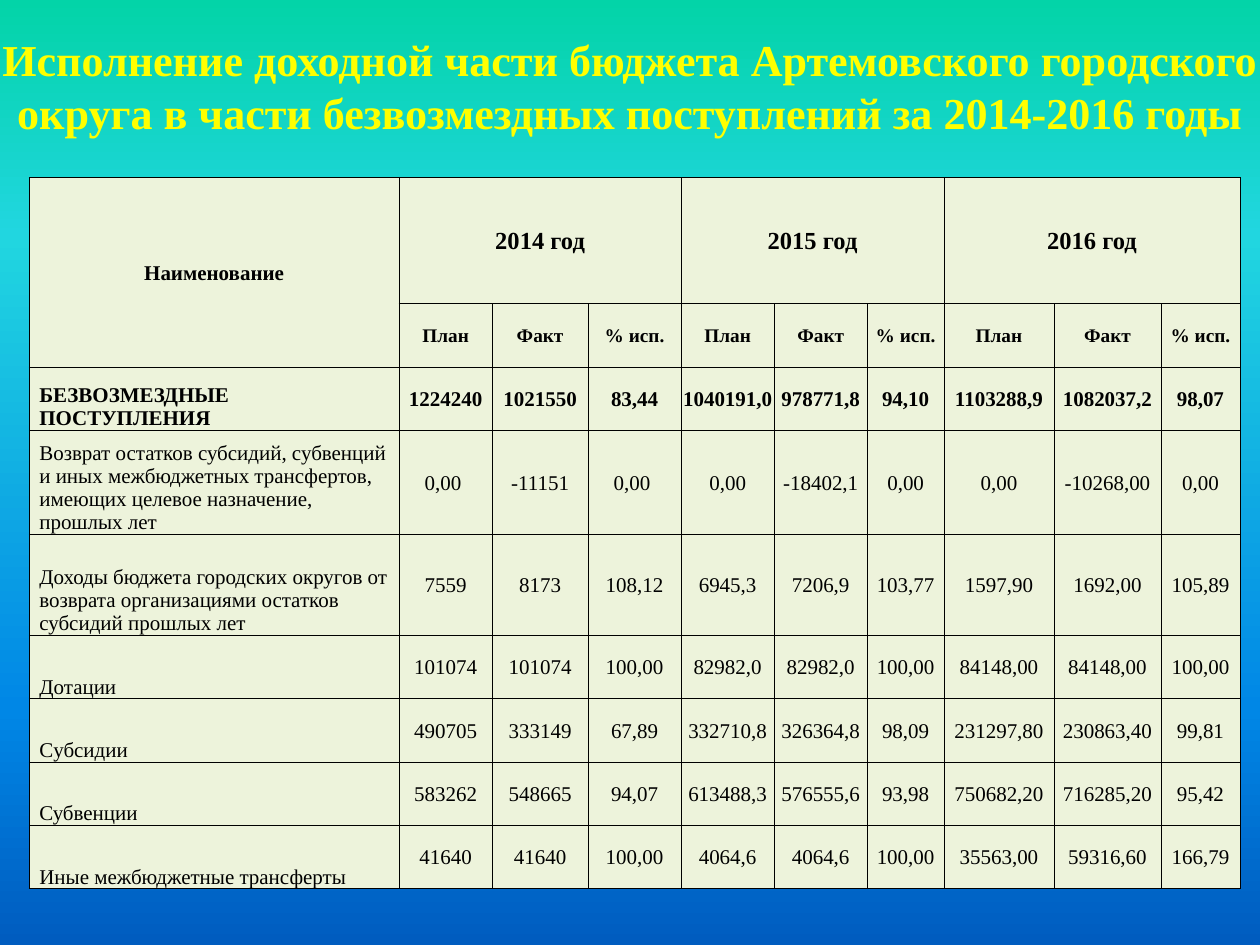
from copy import deepcopy

from lxml import etree
from pptx import Presentation
from pptx.dml.color import RGBColor
from pptx.enum.text import MSO_ANCHOR, PP_ALIGN
from pptx.oxml.ns import qn
from pptx.util import Pt

MIDDLE, BOTTOM = MSO_ANCHOR.MIDDLE, MSO_ANCHOR.BOTTOM
CENTER, LEFT = PP_ALIGN.CENTER, PP_ALIGN.LEFT

THEME = {
    "font": "Times New Roman",
    "title": "FFFF00",
    "text": "000000",
    "cell": "EDF3DB",
    "border": "000000",
    "gradient": [(0, "03D4A8"), (0.25, "21D6E0"), (0.75, "0087E6"), (1, "005CBF")],
    "title_size": 25.2,
    "year_size": 14,
    "body_size": 12,
    "small_size": 11,
}

TITLE = ("Исполнение доходной части бюджета Артемовского городского округа "
         "в части безвозмездных поступлений за 2014-2016 годы")
YEARS = ["2014 год", "2015 год", "2016 год"]
MEASURES = ["План", "Факт", "% исп."]
INCOME = [
    ["БЕЗВОЗМЕЗДНЫЕ ПОСТУПЛЕНИЯ", "1224240", "1021550", "83,44",
     "1040191,0", "978771,8", "94,10", "1103288,9", "1082037,2", "98,07"],
    ["Возврат остатков субсидий, субвенций и иных межбюджетных трансфертов, "
     "имеющих целевое назначение, прошлых лет", "0,00 ", "-11151", "0,00 ",
     "0,00", "-18402,1", "0,00", "0,00", "-10268,00", "0,00"],
    ["Доходы бюджета городских округов от возврата организациями остатков "
     "субсидий прошлых лет", "7559", "8173", "108,12",
     "6945,3", "7206,9", "103,77", "1597,90", "1692,00", "105,89"],
    ["Дотации", "101074", "101074", "100,00",
     "82982,0", "82982,0", "100,00", "84148,00", "84148,00", "100,00"],
    ["Cубсидии", "490705", "333149", "67,89",
     "332710,8", "326364,8", "98,09", "231297,80", "230863,40", "99,81"],
    ["Субвенции", "583262", "548665", "94,07",
     "613488,3", "576555,6", "93,98", "750682,20", "716285,20", "95,42"],
    ["Иные межбюджетные трансферты", "41640", "41640", "100,00",
     "4064,6", "4064,6", "100,00", "35563,00", "59316,60", "166,79"],
]
COLUMN_WIDTHS = [211.4, 53.2, 54.8, 53.2, 53.2, 53.2, 43.9, 62.8, 61.2, 45.1]
ROW_HEIGHTS = [72, 36.3, 36.2, 59.5, 57.6] + [36.2] * 4


def format_text(frame, size, color, bold, align):
    para = frame.paragraphs[0]
    para.alignment = align
    for span in para.runs:
        span.font.name = THEME["font"]
        span.font.size = Pt(size)
        span.font.bold = bold
        span.font.color.rgb = RGBColor.from_string(color)


def add_borders(cell):
    properties = cell._tc.get_or_add_tcPr()
    for position, side in enumerate(("a:lnL", "a:lnR", "a:lnT", "a:lnB")):
        line = etree.Element(qn(side), w=str(Pt(0.5)))
        fill = etree.SubElement(line, qn("a:solidFill"))
        etree.SubElement(fill, qn("a:srgbClr"), val=THEME["border"])
        properties.insert(position, line)


deck = Presentation()
deck.slide_width, deck.slide_height = Pt(720), Pt(540)
page = deck.slides.add_slide(deck.slide_layouts[5])

# Background gradient, top to bottom
background = page.background.fill
background.gradient()
background.gradient_angle = 270
stop_list = page.element.find(".//" + qn("a:gsLst"))
while len(stop_list) < len(THEME["gradient"]):
    stop_list.append(deepcopy(stop_list[0]))
for stop, (position, color) in zip(background.gradient_stops, THEME["gradient"]):
    stop.position = position
    stop.color.rgb = RGBColor.from_string(color)

# Title, filled with the slide background
title = page.shapes.title
title.element.set("useBgFill", "1")
title.left, title.top, title.width, title.height = Pt(0), Pt(11.5), Pt(720), Pt(67.3)
frame = title.text_frame
frame.text = TITLE
frame.word_wrap = True
frame.vertical_anchor = BOTTOM
frame.margin_left, frame.margin_top = Pt(0), Pt(3.6)
frame.margin_right = frame.margin_bottom = Pt(0)
format_text(frame, THEME["title_size"], THEME["title"], True, CENTER)

# Table grid
year_row = ["Наименование"]
for year in YEARS:
    year_row += [year, "", ""]
rows = [year_row, [""] + MEASURES * len(YEARS)] + INCOME
table = page.shapes.add_table(
    len(rows), len(COLUMN_WIDTHS), Pt(16.7), Pt(101.5),
    Pt(sum(COLUMN_WIDTHS)), Pt(sum(ROW_HEIGHTS))).table
for column, width in zip(table.columns, COLUMN_WIDTHS):
    column.width = Pt(width)
for row, height in zip(table.rows, ROW_HEIGHTS):
    row.height = Pt(height)

# Cells: two header rows, a bold total, then the plain items
for row_index, row in enumerate(rows):
    for column_index, text in enumerate(row):
        cell = table.cell(row_index, column_index)
        is_label = column_index == 0 and row_index > 1
        if row_index == 0 and column_index > 0:
            size = THEME["year_size"]
        elif row_index == 1:
            size = THEME["small_size"]
        else:
            size = THEME["body_size"]
        cell.text = text
        cell.vertical_anchor = BOTTOM if is_label else MIDDLE
        cell.margin_left = Pt(5.8 if is_label else 0.7)
        cell.margin_top = cell.margin_right = Pt(0.7)
        cell.margin_bottom = Pt(0)
        cell.fill.solid()
        cell.fill.fore_color.rgb = RGBColor.from_string(THEME["cell"])
        format_text(cell.text_frame, size, THEME["text"], row_index < 3,
                    LEFT if is_label else CENTER)
        add_borders(cell)

# Merged headers
table.cell(0, 0).merge(table.cell(1, 0))
for first in range(1, len(COLUMN_WIDTHS), len(MEASURES)):
    table.cell(0, first).merge(table.cell(0, first + len(MEASURES) - 1))

deck.save("out.pptx")
